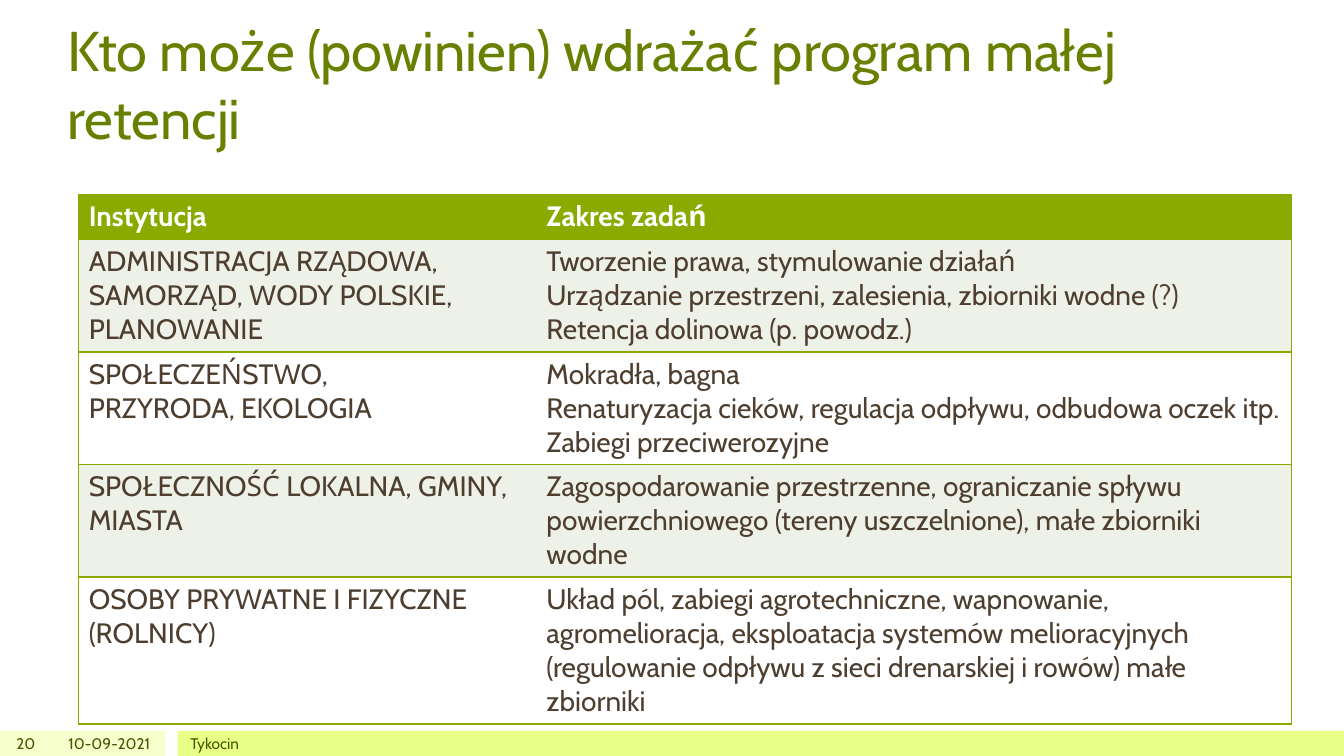
import pptx
import pptx.dml.color
import pptx.enum.shapes
import pptx.enum.text
import pptx.oxml
import pptx.oxml.ns
import pptx.util

Pt = pptx.util.Pt
ALIGN = pptx.enum.text.PP_ALIGN
ANCHOR = pptx.enum.text.MSO_ANCHOR
FONT = "Cabin"
GREEN, WHITE, PALE = "8BAA00", "FFFFFF", "EEF1E7"
TITLE_GREEN, FOOTER_GREEN, BROWN = "688000", "455500", "4D3E2F"
FOOTER_TOP, FOOTER_HEIGHT = 522, 18
COLUMN_WIDTHS = (326.9, 539.3)
ROW_HEIGHTS = (32, 80.4, 80.4, 80.4, 105)
ROWS = (
    ("Instytucja", "Zakres zadań"),
    ("ADMINISTRACJA RZĄDOWA, SAMORZĄD, WODY POLSKIE, PLANOWANIE",
     "Tworzenie prawa, stymulowanie działań\n"
     "Urządzanie przestrzeni, zalesienia, zbiorniki wodne (?)\n"
     "Retencja dolinowa (p. powodz.)"),
    ("SPOŁECZEŃSTWO,\nPRZYRODA, EKOLOGIA",
     "Mokradła, bagna\n"
     "Renaturyzacja cieków, regulacja odpływu, odbudowa oczek itp.\n"
     "Zabiegi przeciwerozyjne"),
    ("SPOŁECZNOŚĆ LOKALNA, GMINY, MIASTA",
     "Zagospodarowanie przestrzenne, ograniczanie spływu powierzchniowego "
     "(tereny uszczelnione), małe zbiorniki wodne"),
    ("OSOBY PRYWATNE I FIZYCZNE (ROLNICY)",
     "Układ pól, zabiegi agrotechniczne, wapnowanie, agromelioracja, "
     "eksploatacja systemów melioracyjnych (regulowanie odpływu z sieci "
     "drenarskiej i rowów) małe zbiorniki"),
)


def rgb(value):
    """Turn a hex string into a colour."""
    return pptx.dml.color.RGBColor.from_string(value)


def style_text(tf, size, color, bold=False, align=ALIGN.LEFT):
    """Format every run of a text frame."""
    for p in tf.paragraphs:
        p.alignment = align
        for r in p.runs:
            r.font.name = FONT
            r.font.size = Pt(size)
            r.font.bold = bold
            r.font.color.rgb = rgb(color)


def add_band(s, left, width, color):
    """Add a plain strip along the bottom edge."""
    sp = s.shapes.add_shape(pptx.enum.shapes.MSO_SHAPE.RECTANGLE, Pt(left),
                            Pt(FOOTER_TOP), Pt(width), Pt(FOOTER_HEIGHT))
    sp.shadow.inherit = False
    sp.fill.solid()
    sp.fill.fore_color.rgb = rgb(color)
    sp.line.fill.background()


def add_text(s, box, text, size, color, anchor, align=ALIGN.LEFT):
    """Add a wrapping text box."""
    tf = s.shapes.add_textbox(*map(Pt, box)).text_frame
    tf.word_wrap = True
    tf.vertical_anchor = anchor
    tf.text = text
    style_text(tf, size, color, align=align)


def set_borders(cell, visible):
    """Draw the named sides of a cell and clear the others."""
    tc_pr = cell._tc.get_or_add_tcPr()
    for index, side in enumerate("LRTB"):
        paint = (f'<a:solidFill><a:srgbClr val="{GREEN}"/></a:solidFill>'
                 if side in visible else "<a:noFill/>")
        tc_pr.insert(index, pptx.oxml.parse_xml(
            f'<a:ln{side} {pptx.oxml.ns.nsdecls("a")} w="{Pt(1)}">{paint}</a:ln{side}>'))


def add_task_table(s, left, top):
    """Add the table of institutions and their tasks."""
    table = s.shapes.add_table(len(ROWS), len(COLUMN_WIDTHS), Pt(left), Pt(top),
                               Pt(sum(COLUMN_WIDTHS)), Pt(sum(ROW_HEIGHTS))).table
    for column, width in zip(table.columns, COLUMN_WIDTHS):
        column.width = Pt(width)
    for i, (texts, height) in enumerate(zip(ROWS, ROW_HEIGHTS)):
        table.rows[i].height = Pt(height)
        header = i == 0
        fill = GREEN if header else PALE if i % 2 else WHITE
        for j, text in enumerate(texts):
            cell = table.cell(i, j)
            cell.text_frame.text = text
            style_text(cell.text_frame, 20, WHITE if header else BROWN, header)
            cell.fill.solid()
            cell.fill.fore_color.rgb = rgb(fill)
            set_borders(cell, "RTB" if j else "LTB")


def main():
    """Build the slide and save it."""
    prs = pptx.Presentation()
    prs.slide_width, prs.slide_height = Pt(960), Pt(540)
    s = prs.slides.add_slide(prs.slide_layouts[6])
    add_band(s, 0, 118, "F6FFCC")
    add_band(s, 127, 833, "E9FF88")
    add_text(s, (41, 18, 895.7, 92.9), "Kto może (powinien) wdrażać program małej retencji",
             40, TITLE_GREEN, ANCHOR.BOTTOM)
    add_task_table(s, 56.2, 139)
    for left, width, text, align in ((0, 32.4, "20", ALIGN.RIGHT),
                                     (36, 78.5, "10-09-2021", ALIGN.RIGHT),
                                     (128.9, 720, "Tykocin", ALIGN.LEFT)):
        add_text(s, (left, FOOTER_TOP, width, FOOTER_HEIGHT), text, 11,
                 FOOTER_GREEN, ANCHOR.MIDDLE, align)
    prs.save("out.pptx")


if __name__ == "__main__":
    main()
